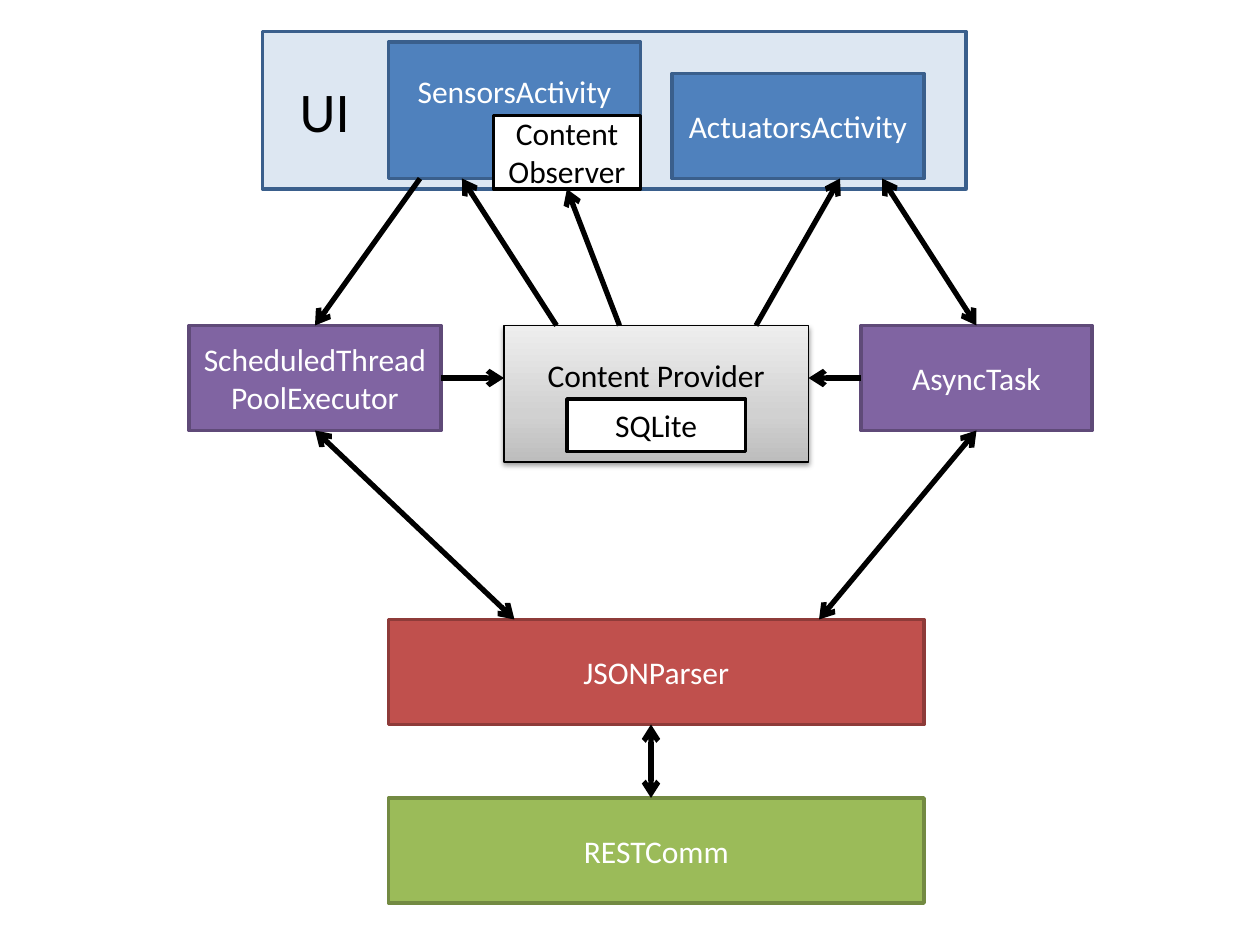
import pptx
import pptx.dml.color
import pptx.enum.shapes
import pptx.enum.text
import pptx.oxml
import pptx.oxml.ns
import pptx.util

FONT = "Calibri"
COLORS = {
    "blue": "4F81BD", "blue_edge": "3A5F8C",
    "purple": "8064A2", "purple_edge": "5F4A78",
    "red": "C0504D", "red_edge": "8E3B39",
    "green": "9BBB59", "green_edge": "738A42",
    "gray_dark": "BDBDBD", "gray_mid": "D1D1D1", "gray_light": "EEEEEE",
    "black": "000000", "white": "FFFFFF",
}
TOP, LEFT, BOTTOM, RIGHT = range(4)
NAMESPACE = pptx.oxml.ns.nsdecls("a")


def grid(count):
    """The layout grid has twelve steps to 2.54 cm."""
    return pptx.util.Cm(2.54 * count / 12)


def rgb(name):
    return pptx.dml.color.RGBColor.from_string(COLORS[name])


def add_box(slide, box, lines, fill, edge, text_color="white", size=18, line_width=2):
    shape = slide.shapes.add_shape(
        pptx.enum.shapes.MSO_SHAPE.RECTANGLE, *[grid(value) for value in box])
    shape.shadow.inherit = False
    shape.fill.solid()
    shape.fill.fore_color.rgb = rgb(fill)
    shape.line.color.rgb = rgb(edge)
    shape.line.width = pptx.util.Pt(line_width)
    frame = shape.text_frame
    frame.word_wrap = True
    frame.vertical_anchor = pptx.enum.text.MSO_ANCHOR.MIDDLE
    paragraph = frame.paragraphs[0]
    paragraph.alignment = pptx.enum.text.PP_ALIGN.CENTER
    for index, line in enumerate(lines):
        if index:
            paragraph.add_line_break()
        run = paragraph.add_run()
        run.text = line
        run.font.name = FONT
        run.font.size = pptx.util.Pt(size)
        run.font.color.rgb = rgb(text_color)
    return shape


def raise_text(shape):
    """Lift the label by half a line to leave room for the inner box."""
    shape.text_frame.margin_bottom = pptx.util.Cm(0.9)


def add_arrow(slide, start, end, begin_join=None, end_join=None, both=False):
    connector = slide.shapes.add_connector(
        pptx.enum.shapes.MSO_CONNECTOR.STRAIGHT,
        *[grid(value) for value in (*start, *end)])
    if begin_join:
        connector.begin_connect(*begin_join)
    if end_join:
        connector.end_connect(*end_join)
    connector.line.color.rgb = rgb("black")
    connector.line.width = pptx.util.Pt(3)
    line = connector.line._get_or_add_ln()
    for tag in ["headEnd", "tailEnd"] if both else ["tailEnd"]:
        line.append(pptx.oxml.parse_xml(f'<a:{tag} {NAMESPACE} type="arrow"/>'))
    connector._element.spPr.append(pptx.oxml.parse_xml(f"<a:effectLst {NAMESPACE}/>"))


def draw_ui(slide, left, top, width, height):
    panel = add_box(slide, (left, top, width, height), ["UI"],
                    "blue", "blue_edge", "black", 32)
    panel.text_frame.paragraphs[0].alignment = pptx.enum.text.PP_ALIGN.LEFT
    panel.text_frame.margin_left = pptx.util.Cm(0.75)
    # Translucent panel fill
    color = panel._element.spPr.find(".//" + pptx.oxml.ns.qn("a:srgbClr"))
    color.append(pptx.oxml.parse_xml(f'<a:alpha {NAMESPACE} val="19000"/>'))
    # Activities and the observer in the corner of the first
    sensors = add_box(slide, (left + 12, top + 1, 24, 13), ["SensorsActivity"],
                      "blue", "blue_edge")
    raise_text(sensors)
    add_box(slide, (left + 39, top + 4, 24, 10), ["ActuatorsActivity"],
            "blue", "blue_edge")
    return add_box(slide, (left + 22, top + 8, 14, 7), ["Content", "Observer"],
                   "white", "black", "black")


def draw_provider(slide, left, top, width, height):
    provider = add_box(slide, (left, top, width, height), ["Content Provider"],
                       "white", "black", "black", line_width=0.75)
    raise_text(provider)
    # Three-stop gradient, dark at the bottom
    properties = provider._element.spPr
    stops = "".join(
        f'<a:gs pos="{position * 1000}"><a:srgbClr val="{COLORS[name]}"/></a:gs>'
        for position, name in [(0, "gray_dark"), (35, "gray_mid"), (100, "gray_light")])
    properties.replace(
        properties.find(pptx.oxml.ns.qn("a:solidFill")),
        pptx.oxml.parse_xml(
            f'<a:gradFill {NAMESPACE} rotWithShape="1"><a:gsLst>{stops}</a:gsLst>'
            '<a:lin ang="16200000" scaled="1"/></a:gradFill>'))
    # Soft drop shadow
    properties.find(pptx.oxml.ns.qn("a:effectLst")).append(pptx.oxml.parse_xml(
        f'<a:outerShdw {NAMESPACE} blurRad="40000" dist="20000" dir="5400000" '
        f'rotWithShape="0"><a:srgbClr val="{COLORS["black"]}"><a:alpha val="38000"/>'
        '</a:srgbClr></a:outerShdw>'))
    add_box(slide, (left + 6, top + 7, 17, 5), ["SQLite"], "white", "black", "black")


def draw_workers(slide, left, top, width, height):
    executor = add_box(slide, (left, top, 24, height),
                       ["ScheduledThread", "PoolExecutor"], "purple", "purple_edge")
    task = add_box(slide, (left + width - 22, top, 22, height), ["AsyncTask"],
                   "purple", "purple_edge")
    return executor, task


def draw_network(slide, left, top, width, height):
    layer = 10
    add_box(slide, (left, top, width, layer), ["JSONParser"], "red", "red_edge")
    add_box(slide, (left, top + height - layer, width, layer), ["RESTComm"],
            "green", "green_edge")
    add_arrow(slide, (left + 25, top + height - layer), (left + 25, top + layer), both=True)


def draw_flows(slide, observer, executor, task):
    # Workers and the parser
    add_arrow(slide, (78, 59), (93, 41), end_join=(task, BOTTOM), both=True)
    add_arrow(slide, (49, 59), (30, 41), end_join=(executor, BOTTOM), both=True)
    # Workers and the activities
    add_arrow(slide, (40, 17), (30, 31), end_join=(executor, TOP))
    add_arrow(slide, (93, 31), (84, 17), begin_join=(task, TOP), both=True)
    # Workers into the provider
    add_arrow(slide, (42, 36), (48, 36), begin_join=(executor, RIGHT))
    add_arrow(slide, (82, 36), (77, 36), begin_join=(task, LEFT))
    # Provider up to the interface
    add_arrow(slide, (72, 31), (80, 17))
    add_arrow(slide, (53, 31), (44, 17))
    add_arrow(slide, (59, 31), (54, 18), end_join=(observer, BOTTOM))


def main():
    presentation = pptx.Presentation()
    presentation.slide_width = grid(120)
    presentation.slide_height = grid(90)
    slide = presentation.slides.add_slide(presentation.slide_layouts[6])
    observer = draw_ui(slide, 25, 3, 67, 15)
    draw_network(slide, 37, 59, 51, 27)
    draw_provider(slide, 48, 31, 29, 13)
    executor, task = draw_workers(slide, 18, 31, 86, 10)
    draw_flows(slide, observer, executor, task)
    presentation.save("out.pptx")


if __name__ == "__main__":
    main()
